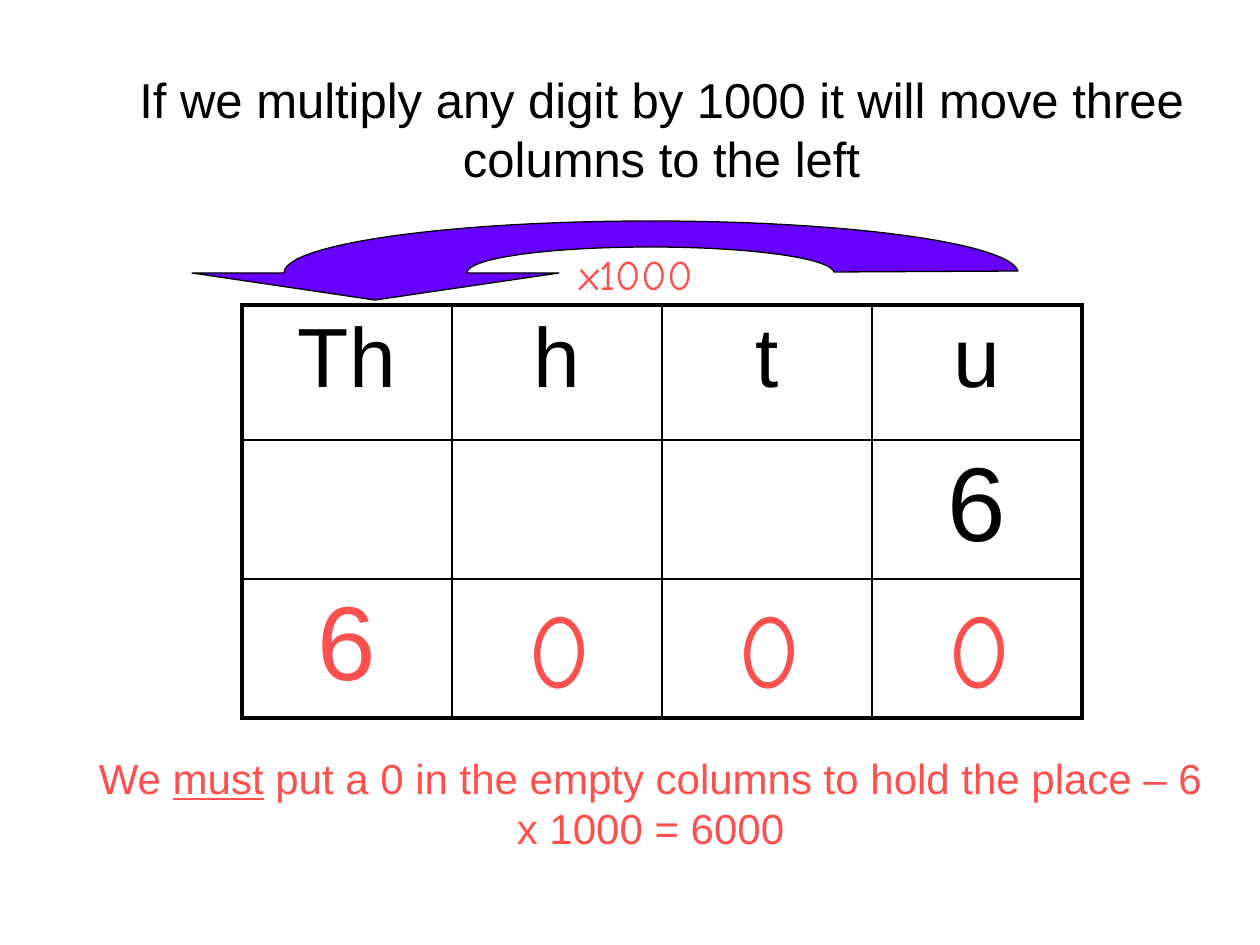
"""Build a place-value slide on multiplying a digit by 1000."""
from pptx import Presentation
from pptx import util as u
from pptx.dml.color import RGBColor
from pptx.enum import text
from pptx.oxml import parse_xml
from pptx.oxml.ns import nsdecls

BLACK = RGBColor(0x00, 0x00, 0x00)
RED = RGBColor(0xFF, 0x50, 0x50)
VIOLET = RGBColor(0x66, 0x00, 0xFF)
SCALE = 914400 / 126
SANS, HAND = "Arial", "Comic Neue"
CENTER, LEFT = text.PP_ALIGN.CENTER, text.PP_ALIGN.LEFT

TITLE = "If we multiply any digit by 1000 it will move three columns to the left"
RULE = [("We ", False), ("must", True),
        (" put a 0 in the empty columns to hold the place – 6 x 1000 = 6000", False)]
GRID = [["Th", "h", "t", "u"], ["", "", "", "6"], ["6", "", "", ""]]
ROW_STYLES = [(48, BLACK), (60, BLACK), (60, RED)]
ROW_HEIGHTS = [135, 139, 139]
TABLE_LEFT, TABLE_TOP, COL_WIDTH = 242, 305, 210
ZERO_COLUMNS = [1, 2, 3]
ARROW_START = (467, 273)
ARROW = [
    [(467, 258), (549, 247), (651, 247)],
    [(750, 247), (830, 258), (834, 272)],
    [(1018, 271)],
    [(1009, 243), (848, 221), (651, 221)],
    [(449, 221), (284, 244), (284, 273)],
    [(192, 273)], [(375, 300)], [(559, 273)],
]


def px(n):
    return u.Emu(round(n * SCALE))


def write(tf, runs, size, color, font=SANS, align=CENTER):
    p = tf.paragraphs[0]
    p.alignment = align
    for words, underline in runs:
        r = p.add_run()
        r.text = words
        r.font.size, r.font.name = u.Pt(size), font
        r.font.color.rgb = color
        if underline:
            r.font.underline = True


def place(sp, x, y, w, h):
    sp.left, sp.top, sp.width, sp.height = map(px, (x, y, w, h))
    tf = sp.text_frame
    tf.word_wrap = True
    tf.auto_size = text.MSO_AUTO_SIZE.NONE
    tf.vertical_anchor = text.MSO_ANCHOR.TOP
    return tf


def add_text(s, box, *style):
    write(place(s.shapes.add_textbox(0, 0, 0, 0), *box), *style)


def set_borders(cell, edges):
    pr = cell._tc.get_or_add_tcPr()
    for i, (side, outer) in enumerate(edges):
        width = u.Pt(2.25 if outer else 1)
        pr.insert(i, parse_xml(
            f'<a:ln{side} {nsdecls("a")} w="{width}"><a:solidFill>'
            f'<a:srgbClr val="{BLACK}"/></a:solidFill></a:ln{side}>'))


def add_grid(s):
    rows, cols = len(GRID), len(GRID[0])
    table = s.shapes.add_table(rows, cols, px(TABLE_LEFT), px(TABLE_TOP),
                               px(cols * COL_WIDTH), px(sum(ROW_HEIGHTS))).table
    table.first_row = table.horz_banding = False
    for col in table.columns:
        col.width = px(COL_WIDTH)
    for i, row in enumerate(GRID):
        table.rows[i].height = px(ROW_HEIGHTS[i])
        for j, label in enumerate(row):
            cell = table.cell(i, j)
            cell.fill.background()
            set_borders(cell, [("L", j == 0), ("R", j == cols - 1),
                               ("T", i == 0), ("B", i == rows - 1)])
            if label:
                write(cell.text_frame, [(label, False)], *ROW_STYLES[i])


def curve(points, steps=24):
    for k in range(1, steps + 1):
        t = k / steps
        weights = ((1 - t) ** 3, 3 * t * (1 - t) ** 2, 3 * t * t * (1 - t), t ** 3)
        yield tuple(sum(w * p[axis] for w, p in zip(weights, points)) for axis in (0, 1))


def add_arrow(s):
    outline = [ARROW_START]
    for part in ARROW:
        outline += curve([outline[-1], *part]) if len(part) == 3 else part
    points = [(px(x), px(y)) for x, y in outline]
    builder = s.shapes.build_freeform(*points[0])
    builder.add_line_segments(points[1:], close=True)
    sp = builder.convert_to_shape()
    sp.shadow.inherit = False
    sp.fill.solid()
    sp.fill.fore_color.rgb = VIOLET
    sp.line.color.rgb = BLACK
    sp.line.width = u.Pt(0.75)


def main():
    prs = Presentation()
    prs.slide_width, prs.slide_height = px(1260), px(945)
    s = prs.slides.add_slide(prs.slide_layouts[5])
    write(place(s.shapes.title, 105, 63, 1113, 131), [(TITLE, False)], 28, BLACK)
    add_grid(s)
    add_arrow(s)
    add_text(s, (73, 746, 1155, 115), RULE, 24, RED)
    for j in ZERO_COLUMNS:
        x = TABLE_LEFT + j * COL_WIDTH + 63
        add_text(s, (x, 577, 105, 139), [("0", False)], 60, RED, HAND, LEFT)
    add_text(s, (567, 242, 147, 63), [("x1000", False)], 24, RED, HAND, LEFT)
    prs.save("out.pptx")


if __name__ == "__main__":
    main()
